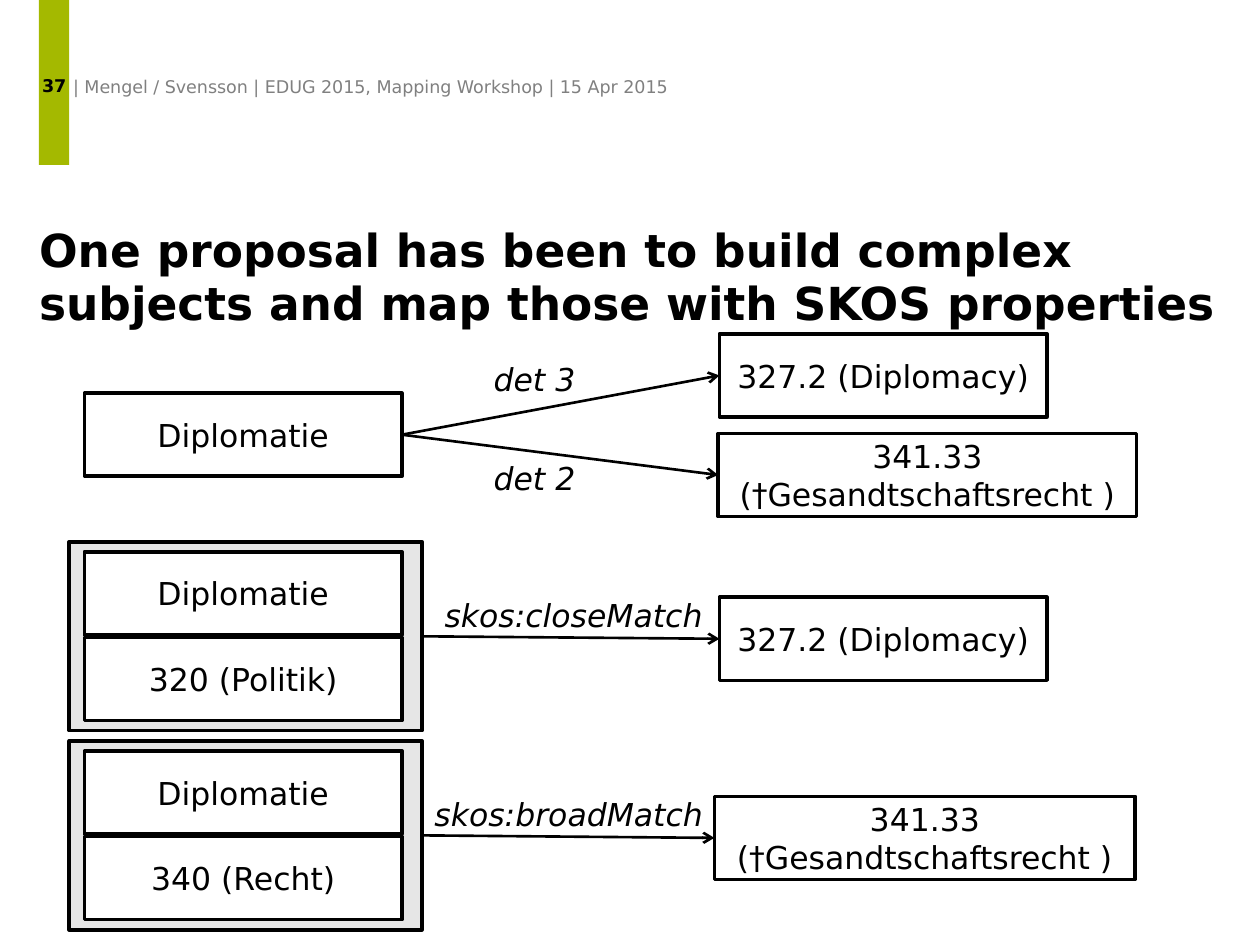
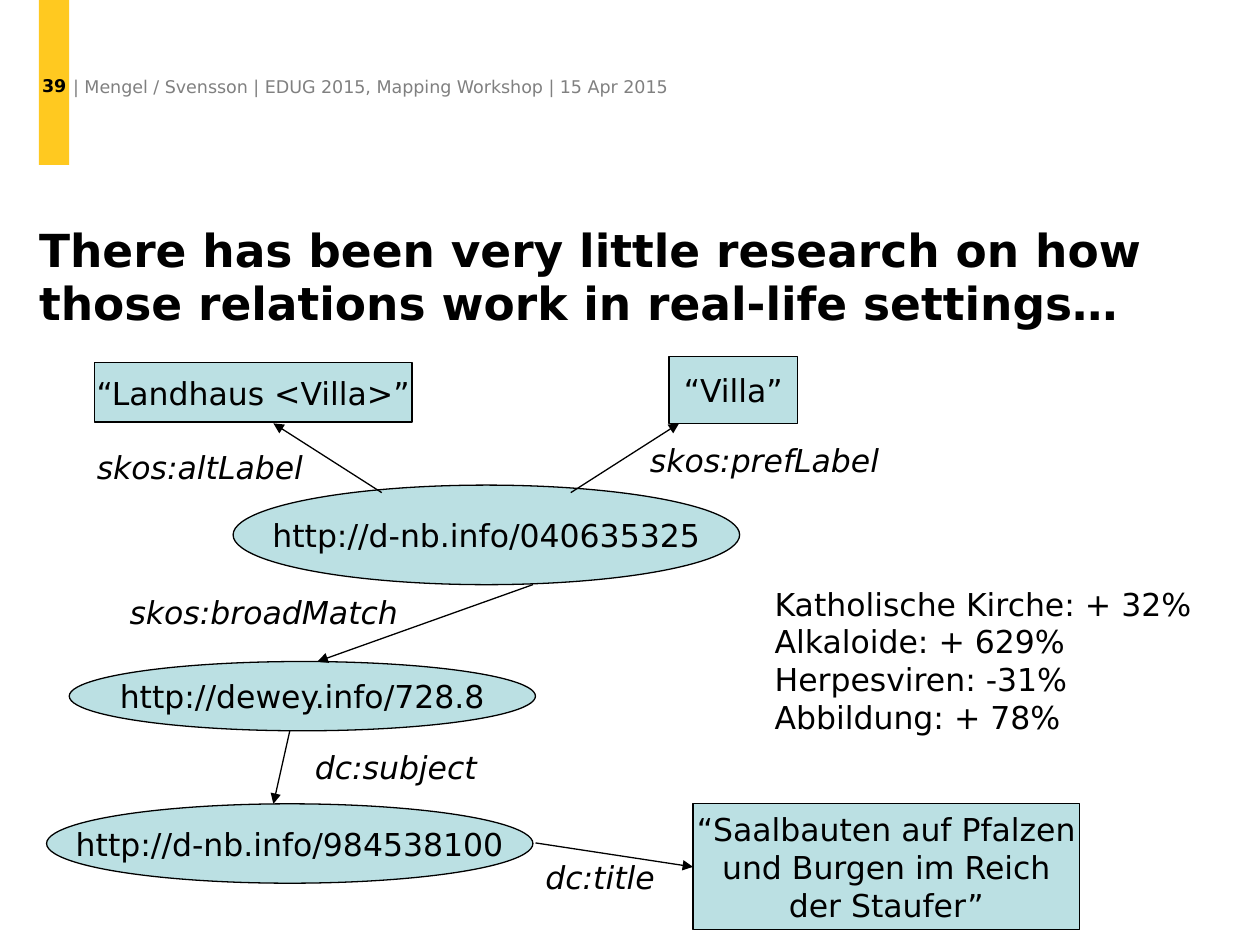
from dataclasses import dataclass

from lxml import etree
from pptx import Presentation
from pptx import util as u
from pptx.dml.color import RGBColor
from pptx.enum import shapes, text
from pptx.oxml.ns import qn

FOOTER = "| Mengel / Svensson | EDUG 2015, Mapping Workshop | 15 Apr 2015"
RIGHT, LEFT = 3, 1  # connection sites of a rectangle
RECT, OVAL = shapes.MSO_SHAPE.RECTANGLE, shapes.MSO_SHAPE.OVAL


@dataclass(frozen=True)
class Theme:
    font: str = "DejaVu Sans"
    black: str = "000000"
    grey: str = "808080"
    white: str = "FFFFFF"
    frame: str = "E6E6E6"
    node: str = "BBE0E3"
    green: str = "A4B900"
    yellow: str = "FFC920"
    title: int = 26
    title_spacing: int = 30
    body: int = 18
    small: int = 10
    heavy: float = 2
    medium: float = 1.5
    thin: float = 0.75


T = Theme()

# ---- Content: mapping proposal ----
PROPOSAL = {
    "number": "37", "color": T.green,
    "title": "One proposal has been to build complex subjects "
             "and map those with SKOS properties",
}
SUBJECT = "Diplomatie"
DIPLOMACY = "327.2 (Diplomacy)"
LEGATION = "341.33 (†Gesandtschaftsrecht )"
# target text, (left, top, width), label, (label left, top, width)
SIMPLE_MAPPINGS = [
    (DIPLOMACY, (5.71, 2.65, 2.6), "det 3", (3.82, 2.81, 0.86)),
    (LEGATION, (5.7, 3.44, 3.32), "det 2", (3.82, 3.59, 0.86)),
]
# second part of the subject, then the same fields as above
COMPLEX_MAPPINGS = [
    ("320 (Politik)", DIPLOMACY, (5.71, 4.74, 2.6),
     "skos:closeMatch", (3.43, 4.68, 2.27)),
    ("340 (Recht)", LEGATION, (5.67, 6.32, 3.34),
     "skos:broadMatch", (3.35, 6.26, 2.36)),
]

# ---- Content: relations in practice ----
RESEARCH = {
    "number": "39", "color": T.yellow,
    "title": "There has been very little research on how those relations "
             "work in real-life settings…",
}
NODES = {
    "alt": (RECT, (0.75, 2.88, 2.52, 0.47), ["“Landhaus <Villa>”"]),
    "pref": (RECT, (5.31, 2.83, 1.02, 0.53), ["“Villa”"]),
    "concept": (OVAL, (1.85, 3.85, 4.02, 0.79), ["http://d-nb.info/040635325"]),
    "class": (OVAL, (0.55, 5.25, 3.7, 0.55), ["http://dewey.info/728.8"]),
    "work": (OVAL, (0.37, 6.38, 3.86, 0.63), ["http://d-nb.info/984538100"]),
    "work title": (RECT, (5.5, 6.38, 3.07, 1),
                   ["“Saalbauten auf Pfalzen", "und Burgen im Reich", "der Staufer”"]),
}
# label, (label left, top, width), arrow start, arrow end (point or node)
RELATIONS = [
    ("skos:altLabel", (0.67, 3.51, 1.85), (3.03, 3.91), (2.17, 3.36)),
    ("skos:prefLabel", (5.06, 3.45, 2.04), (4.53, 3.91), (5.39, 3.36)),
    ("skos:broadMatch", (0.93, 4.66, 2.34), (4.23, 4.64), (2.52, 5.25)),
    ("dc:subject", (2.4, 5.89, 1.51), (2.3, 5.8), (2.17, 6.38)),
    ("dc:title", (4.23, 6.76, 1.09), (4.25, 6.69), "work title"),
]
CHANGES = ["Katholische Kirche: + 32%", "Alkaloide: + 629%",
           "Herpesviren: -31%", "Abbildung: + 78%"]

# ---- Grid of the mapping slide ----
BOX_LEFT, BOX_WIDTH, BOX_HEIGHT = 0.67, 2.52, 0.66
SIMPLE_TOP = 3.12
FRAME_LEFT, FRAME_TOP, FRAME_WIDTH, FRAME_HEIGHT = 0.55, 4.3, 2.8, 1.5
FRAME_STEP, FRAME_PAD, PART_STEP = 1.58, 0.08, 0.68
LABEL_HEIGHT = 0.4


def rgb(value):
    return RGBColor.from_string(value)


def inches(values):
    return [u.Inches(v) for v in values]


def write(sp, lines, size=T.body, color=T.black, bold=False, italic=False,
          align=text.PP_ALIGN.LEFT, wrap=True, insets=None, spacing=None):
    tf = sp.text_frame
    tf.word_wrap = wrap
    if insets:
        (tf.margin_left, tf.margin_top,
         tf.margin_right, tf.margin_bottom) = inches(insets)
    for i, line in enumerate(lines):
        p = tf.add_paragraph() if i else tf.paragraphs[0]
        p.text = line
        p.alignment = align
        if spacing:
            p.line_spacing = u.Pt(spacing)
        f = p.font
        f.name, f.size, f.bold, f.italic = T.font, u.Pt(size), bold, italic
        f.color.rgb = rgb(color)
    return tf


def add_text(s, at, lines, grow=True, **style):
    tf = write(s.shapes.add_textbox(*inches(at)), lines, **style)
    if grow:
        tf.auto_size = text.MSO_AUTO_SIZE.SHAPE_TO_FIT_TEXT


def add_label(s, place, label):
    add_text(s, (*place, LABEL_HEIGHT), [label], italic=True, wrap=False)


def add_box(s, at, lines=(), kind=RECT, fill=None, line=T.heavy, **style):
    sp = s.shapes.add_shape(kind, *inches(at))
    sp.shadow.inherit = False
    if fill:
        sp.fill.solid()
        sp.fill.fore_color.rgb = rgb(fill)
    else:
        sp.fill.background()
    if line:
        sp.line.color.rgb = rgb(T.black)
        sp.line.width = u.Pt(line)
    else:
        sp.line.fill.background()
    if lines:
        tf = write(sp, lines, align=text.PP_ALIGN.CENTER, **style)
        tf.vertical_anchor = text.MSO_ANCHOR.MIDDLE
    return sp


def add_arrow(s, start, end, width, head):
    """Draw an arrow; each end is a point, or a rectangle to be joined."""
    points = [p if isinstance(p, tuple) else (0, 0) for p in (start, end)]
    c = s.shapes.add_connector(shapes.MSO_CONNECTOR.STRAIGHT,
                               *inches(points[0] + points[1]))
    if not isinstance(start, tuple):
        c.begin_connect(start, RIGHT)
    if not isinstance(end, tuple):
        c.end_connect(end, LEFT)
    c.line.color.rgb = rgb(T.black)
    c.line.width = u.Pt(width)
    etree.SubElement(c.line._get_or_add_ln(), qn("a:tailEnd"), type=head)
    etree.SubElement(c._element.spPr, qn("a:effectLst"))


def add_slide(prs, page):
    s = prs.slides.add_slide(prs.slide_layouts[6])
    add_box(s, (0.31, 0, 0.24, 1.31), [page["number"]], fill=page["color"],
            line=None, size=T.small, bold=True, wrap=False, insets=(0, 0.04, 0, 0))
    add_text(s, (0.58, 0.6, 7.68, 0.17), [FOOTER], size=T.small, color=T.grey,
             insets=(0, 0, 0, 0))
    add_text(s, (0.31, 1.78, 9.41, 0.85), [page["title"]], grow=False,
             size=T.title, bold=True, insets=(0, 0, 0, 0), spacing=T.title_spacing)
    return s


def add_mapping(s, source, target, place, label, label_place):
    left, top, width = place
    box = add_box(s, (left, top, width, BOX_HEIGHT), [target])
    add_arrow(s, source, box, T.medium, "arrow")
    left, top, width = label_place
    add_label(s, label_place, label)


def build_proposal(prs):
    s = add_slide(prs, PROPOSAL)
    subject = add_box(s, (BOX_LEFT, SIMPLE_TOP, BOX_WIDTH, BOX_HEIGHT), [SUBJECT])
    for mapping in SIMPLE_MAPPINGS:
        add_mapping(s, subject, *mapping)
    for i, (part, *mapping) in enumerate(COMPLEX_MAPPINGS):
        top = FRAME_TOP + i * FRAME_STEP
        frame = add_box(s, (FRAME_LEFT, top, FRAME_WIDTH, FRAME_HEIGHT), fill=T.frame)
        for j, name in enumerate((SUBJECT, part)):
            add_box(s, (BOX_LEFT, top + FRAME_PAD + j * PART_STEP,
                        BOX_WIDTH, BOX_HEIGHT), [name], fill=T.white)
        add_mapping(s, frame, *mapping)


def build_research(prs):
    s = add_slide(prs, RESEARCH)
    nodes = {name: add_box(s, at, lines, kind, T.node, T.thin, wrap=False)
             for name, (kind, at, lines) in NODES.items()}
    for label, place, start, end in RELATIONS:
        add_arrow(s, start, nodes.get(end, end), T.thin, "triangle")
        add_label(s, place, label)
    add_text(s, (6.05, 4.59, 3.9, 1.31), CHANGES)


def main():
    prs = Presentation()
    prs.slide_width, prs.slide_height = inches((10, 7.5))
    build_proposal(prs)
    build_research(prs)
    prs.save("out.pptx")


if __name__ == "__main__":
    main()
